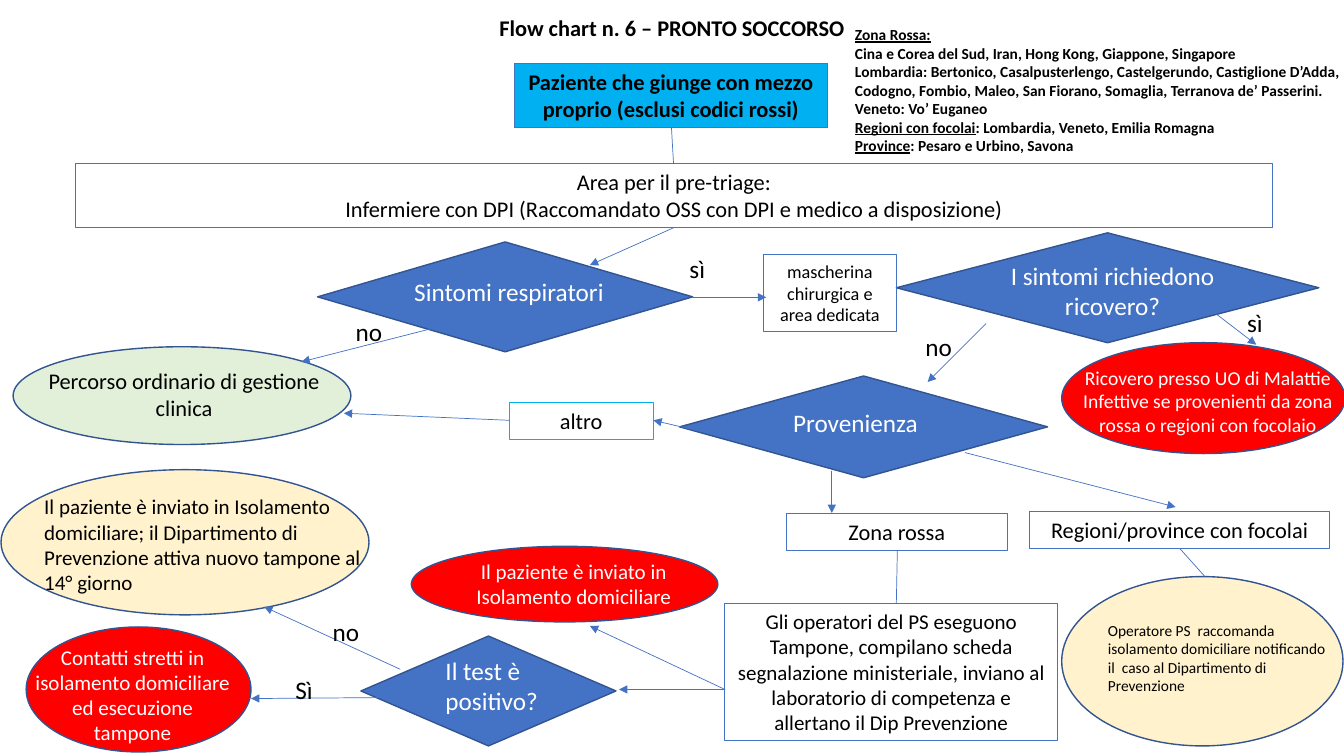
import pptx
import pptx.util
import pptx.dml.color
import pptx.enum.shapes
import pptx.enum.text
import pptx.oxml
import pptx.oxml.ns

Inches = pptx.util.Inches
Pt = pptx.util.Pt
RGBColor = pptx.dml.color.RGBColor
Kind = pptx.enum.shapes.MSO_SHAPE
Align = pptx.enum.text.PP_ALIGN
Sub = pptx.oxml.ns.qn

BLACK = RGBColor(0, 0, 0)
WHITE = RGBColor(255, 255, 255)
BLUE = RGBColor(0x44, 0x72, 0xC4)
NAVY = RGBColor(0x32, 0x54, 0x91)
CYAN = RGBColor(0, 0xB0, 0xF0)
RED = RGBColor(255, 0, 0)
GREEN = RGBColor(0xE2, 0xF0, 0xD9)
CREAM = RGBColor(0xFF, 0xF2, 0xCC)

FRAME = {
    "word_wrap": True,
    "auto_size": pptx.enum.text.MSO_AUTO_SIZE.NONE,
    "vertical_anchor": pptx.enum.text.MSO_ANCHOR.TOP,
    "margin_left": Inches(0.1),
    "margin_right": Inches(0.1),
    "margin_top": Inches(0.05),
    "margin_bottom": Inches(0.05),
}

SHAPES = [
    (Kind.OVAL, (0.13, 3.44, 3.35, 0.97), GREEN),
    (Kind.DIAMOND, (3.15, 2.4, 3.72, 1.09), BLUE),
    (Kind.DIAMOND, (8.89, 2.31, 4.19, 1.09), BLUE),
    (Kind.OVAL, (10.53, 3.4, 2.81, 1.1), RED),
    (Kind.DIAMOND, (6.74, 3.73, 3.65, 1.01), BLUE),
    (Kind.OVAL, (4.08, 5.42, 3.04, 0.75), RED),
    (Kind.OVAL, (0.26, 6.22, 2.23, 1.24), RED),
    (Kind.OVAL, (0.01, 4.66, 3.65, 1.44), CREAM),
    (Kind.DIAMOND, (3.58, 6.31, 2.53, 1.09), BLUE),
    (Kind.OVAL, (10.53, 5.72, 2.79, 1.68), CREAM),
]

BOXES = [
    ((5.1, 0.63, 3.11, 0.64), 16, ["Paziente che giunge con mezzo proprio (esclusi codici rossi)"],
     {"fill": CYAN, "bold": True}),
    ((0.75, 1.62, 11.87, 0.64), 16,
     ["Area per il pre-triage:",
      "Infermiere con DPI (Raccomandato OSS con DPI e medico a disposizione)"], {}),
    ((7.57, 2.53, 1.32, 0.76), 13, ["mascherina chirurgica e area dedicata"], {}),
    ((7.8, 5.09, 2.19, 0.37), 16, ["Zona rossa"], {}),
    ((10.21, 5.07, 2.98, 0.37), 16, ["Regioni/province con focolai"], {}),
    ((7.19, 5.99, 3.3, 1.36), 15,
     ["Gli operatori del PS eseguono Tampone, compilano scheda segnalazione ministeriale, "
      "inviano al laboratorio di competenza e allertano il Dip Prevenzione"], {}),
    ((5.05, 3.99, 1.43, 0.37), 16, ["altro"], {"edge": CYAN}),
]

LINKS = [
    ((6.66, 1.27), (6.68, 1.62), False),
    ((11.7, 5.44), (11.95, 5.72), False),
    ((8.9, 5.46), (8.89, 5.99), False),
    ((8.25, 4.67), (8.25, 5.09), True),
    ((9.57, 4.49), (11.66, 5.03), True),
    ((4.36, 3.24), (2.99, 3.59), True),
    ((6.87, 2.95), (7.6, 2.95), True),
    ((9.78, 3.21), (9.2, 3.79), True),
    ((12.03, 3.09), (12.46, 3.42), True),
    ((3.87, 6.92), (2.49, 6.93), True),
    ((7.19, 6.84), (6.14, 6.84), True),
    ((3.97, 6.64), (2.62, 6.02), True),
    ((7.19, 6.84), (5.85, 6.21), True),
    ((6.95, 4.28), (6.48, 4.17), True),
    ((5.05, 4.17), (3.41, 4.1), True),
    ((6.68, 2.26), (5.85, 2.63), True),
]

MID = {"alignment": Align.CENTER}
LEFT = {"alignment": Align.LEFT}
LABELS = [
    ((0.33, 3.59, 2.99, 0.64), 16, BLACK, MID, "Percorso ordinario di gestione clinica"),
    ((4.01, 2.69, 2.28, 0.4), 18, WHITE, LEFT, "Sintomi respiratori"),
    ((9.78, 2.53, 2.51, 0.71), 18, WHITE, MID, "I sintomi richiedono ricovero?"),
    ((10.57, 3.58, 2.82, 0.81), 14, WHITE, MID,
     "Ricovero presso UO di Malattie Infettive se provenienti da zona rossa o regioni con focolaio"),
    ((7.23, 3.99, 2.51, 0.4), 18, WHITE, MID, "Provenienza"),
    ((4.3, 5.49, 2.78, 0.61), 15, WHITE, MID, "Il paziente è inviato in Isolamento domiciliare"),
    ((0.24, 6.34, 2.15, 1.11), 15, WHITE, MID,
     "Contatti stretti in isolamento domiciliare ed esecuzione tampone"),
    ((4.32, 6.45, 1.23, 0.71), 18, WHITE, LEFT, "Il test è positivo?"),
    ((0.34, 4.85, 3.4, 1.11), 15, BLACK, LEFT,
     "Il paziente è inviato in Isolamento domiciliare; il Dipartimento di Prevenzione "
     "attiva nuovo tampone al 14° giorno"),
    ((10.39, 6.11, 2.9, 0.84), 11, BLACK, {"alignment": Align.LEFT, "level": 1},
     "Operatore PS  raccomanda isolamento domiciliare notificando il  caso al "
     "Dipartimento di Prevenzione"),
    ((3.43, 3.09, 0.68, 0.4), 18, BLACK, LEFT, "no"),
    ((6.74, 2.46, 0.64, 0.4), 18, BLACK, LEFT, "sì"),
    ((12.27, 3, 0.64, 0.4), 18, BLACK, LEFT, "sì"),
    ((9.08, 3.24, 0.68, 0.4), 18, BLACK, LEFT, "no"),
    ((2.83, 6.64, 0.58, 0.4), 18, BLACK, LEFT, "Sì"),
    ((3.2, 6.07, 0.58, 0.4), 18, BLACK, LEFT, "no"),
]

ZONES = [
    ("Zona Rossa:", ""),
    ("", "Cina e Corea del Sud, Iran, Hong Kong, Giappone, Singapore"),
    ("", "Lombardia: Bertonico, Casalpusterlengo, Castelgerundo, Castiglione D’Adda, "
         "Codogno, Fombio, Maleo, San Fiorano, Somaglia, Terranova de’ Passerini."),
    ("", "Veneto: Vo’ Euganeo"),
    ("Regioni con focolai", ": Lombardia, Veneto, Emilia Romagna"),
    ("Province", ": Pesaro e Urbino, Savona"),
]


def apply(item, looks):
    for name, value in looks.items():
        setattr(item, name, value)


def place(shape, box):
    apply(shape, dict(zip(("left", "top", "width", "height"), map(Inches, box))))


def add_run(para, words, size, tone=BLACK, **more):
    run = para.add_run()
    run.text = words
    apply(run.font, {"name": "Calibri", "size": Pt(size), **more})
    run.font.color.rgb = tone


def write(shape, lines, size, tone, looks, **more):
    frame = shape.text_frame
    apply(frame, FRAME)
    for row, words in enumerate(lines):
        para = frame.add_paragraph() if row else frame.paragraphs[0]
        apply(para, looks)
        add_run(para, words, size, tone, **more)


def add_form(slide, kind, box, fill, edge=NAVY, width=1):
    shape = slide.shapes.add_shape(kind, *map(Inches, box))
    shape.shadow.inherit = False
    if fill is None:
        shape.fill.background()
    else:
        shape.fill.solid()
        shape.fill.fore_color.rgb = fill
    shape.line.color.rgb = edge
    shape.line.width = Pt(width)
    return shape


def add_box(slide, box, size, lines, fill=None, edge=BLUE, bold=False):
    shape = add_form(slide, Kind.RECTANGLE, box, fill, edge, 0.75)
    write(shape, lines, size, BLACK, MID, bold=bold)


def add_link(slide, start, end, arrow):
    link = slide.shapes.add_connector(
        pptx.enum.shapes.MSO_CONNECTOR.STRAIGHT, *map(Inches, start + end))
    link.line.color.rgb = BLUE
    link.line.width = Pt(0.5)
    if arrow:
        tail = pptx.oxml.ns.qn("a:tailEnd")
        link.line._get_or_add_ln().append(link._element.makeelement(tail, {"type": "triangle"}))
    props = link._element.spPr
    props.append(props.makeelement(Sub("a:effectLst"), {}))


def add_label(slide, box, size, tone, looks, words):
    write(slide.shapes.add_textbox(*map(Inches, box)), [words], size, tone, looks)


def fill_title(title):
    place(title, (1.18, 0.09, 10.97, 0.64))
    write(title, ["Flow chart n. 6 – PRONTO SOCCORSO"], 16, BLACK, MID, bold=True)


def fill_zones(body):
    place(body, (8.38, 0.2, 4.95, 1.4))
    frame = body.text_frame
    apply(frame, {**FRAME, "margin_right": Inches(0.02)})
    for row, (head, rest) in enumerate(ZONES):
        para = frame.add_paragraph() if row else frame.paragraphs[0]
        apply(para, {"alignment": Align.LEFT, "space_before": Pt(0)})
        props = para._p.get_or_add_pPr()
        props.set("marL", "0")
        props.set("indent", "0")
        props.append(props.makeelement(Sub("a:buNone"), {}))
        for words, line in ((head, True), (rest, False)):
            if words:
                add_run(para, words, 11, bold=True, underline=line)


def main():
    deck = pptx.Presentation()
    apply(deck, {"slide_width": Inches(13.33), "slide_height": Inches(7.5)})
    slide = deck.slides.add_slide(deck.slide_layouts[1])
    fill_title(slide.shapes.title)
    fill_zones(slide.placeholders[1])
    for form in SHAPES:
        add_form(slide, *form)
    for box, size, lines, looks in BOXES:
        add_box(slide, box, size, lines, **looks)
    for link in LINKS:
        add_link(slide, *link)
    for label in LABELS:
        add_label(slide, *label)
    deck.save("out.pptx")


if __name__ == "__main__":
    main()
